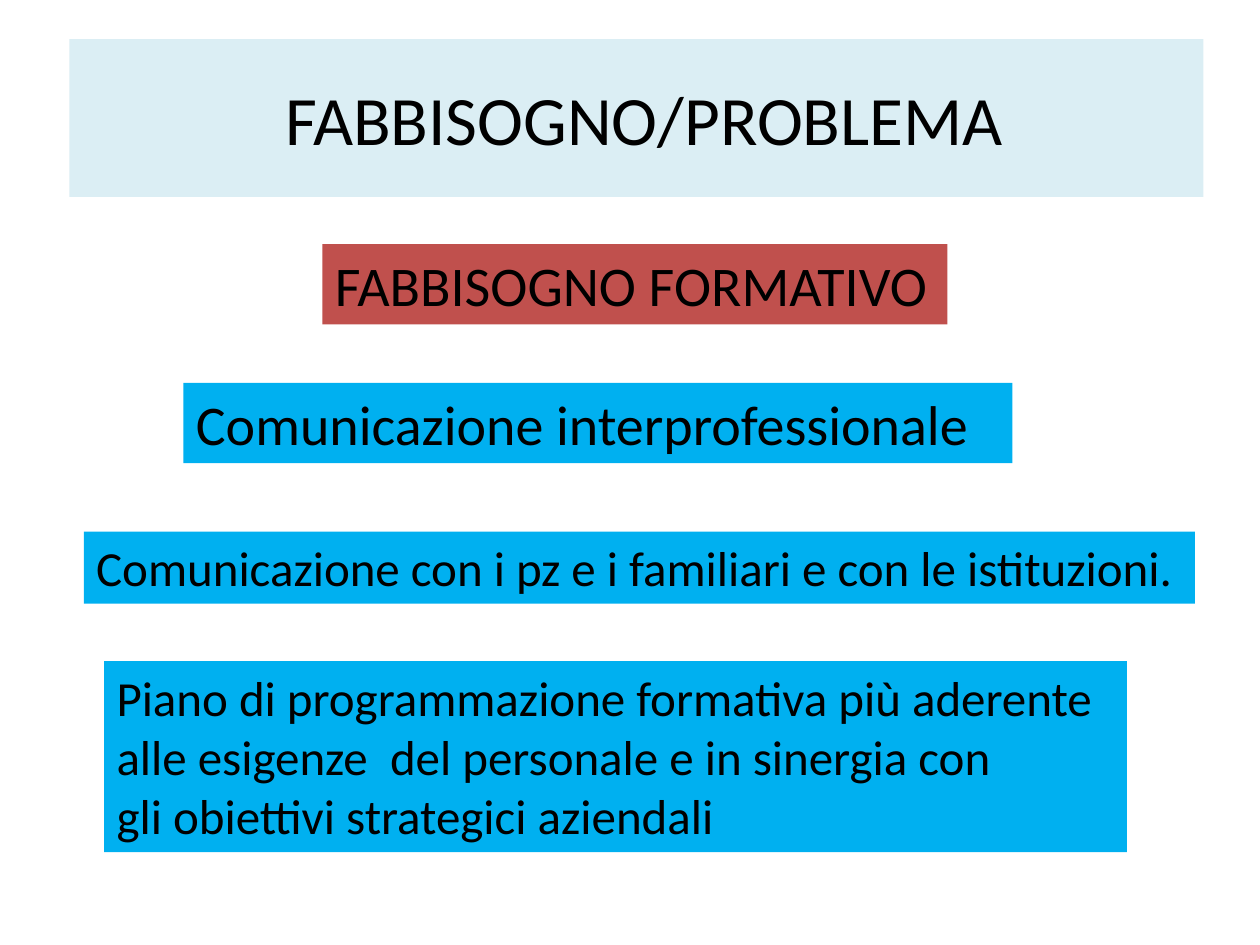
from pptx import Presentation
from pptx.dml.color import RGBColor
from pptx.enum.text import MSO_ANCHOR as Anchor, MSO_AUTO_SIZE as Fit, PP_ALIGN as Align
from pptx.util import Cm, Pt

BLUE, RED, PALE, BLACK = "00B0F0", "C0504D", "DBEEF4", "000000"

# Left, top, width, height in cm; fill; text size; lines
NEEDS = [
    ((6.5, 4.92, 12.6, 1.62), RED, 32, ["FABBISOGNO FORMATIVO"]),
    ((3.7, 7.72, 16.71, 1.62), BLUE, 32, ["Comunicazione interprofessionale"]),
    ((1.69, 10.72, 22.4, 1.45), BLUE, 28,
     ["Comunicazione con i pz e i familiari e con le istituzioni."]),
    ((2.1, 13.33, 20.62, 3.85), BLUE, 28,
     ["Piano di programmazione formativa più aderente",
      "alle esigenze  del personale e in sinergia con",
      "gli obiettivi strategici aziendali"]),
]


def paint(fill, color):
    fill.solid()
    fill.fore_color.rgb = RGBColor.from_string(color)


def write(frame, lines, size, align):
    frame.text = "\n".join(lines)
    look = {"name": "Calibri", "size": Pt(size)}
    for para in frame.paragraphs:
        para.alignment = align
        for key, value in look.items():
            setattr(para.font, key, value)
        para.font.color.rgb = RGBColor.from_string(BLACK)


def add_title(slide, box):
    title = slide.shapes.title
    for key, value in zip(("left", "top", "width", "height"), box):
        setattr(title, key, Cm(value))
    paint(title.fill, PALE)
    frame = title.text_frame
    write(frame, ["FABBISOGNO/PROBLEMA"], 39.6, Align.CENTER)
    form = {"auto_size": Fit.NONE, "vertical_anchor": Anchor.MIDDLE,
            "margin_left": Cm(0.57)}
    for key, value in form.items():
        setattr(frame, key, value)


def add_need(slide, box, color, size, lines):
    need = slide.shapes.add_textbox(*map(Cm, box))
    paint(need.fill, color)
    frame = need.text_frame
    frame.word_wrap = True
    frame.auto_size = Fit.SHAPE_TO_FIT_TEXT
    write(frame, lines, size, Align.LEFT)


def main():
    deck = Presentation()
    deck.slide_width, deck.slide_height = Cm(25.4), Cm(19.05)
    slide = deck.slides.add_slide(deck.slide_layouts[5])
    add_title(slide, (1.4, 0.79, 22.86, 3.18))
    for need in NEEDS:
        add_need(slide, *need)
    deck.save("out.pptx")


if __name__ == "__main__":
    main()
